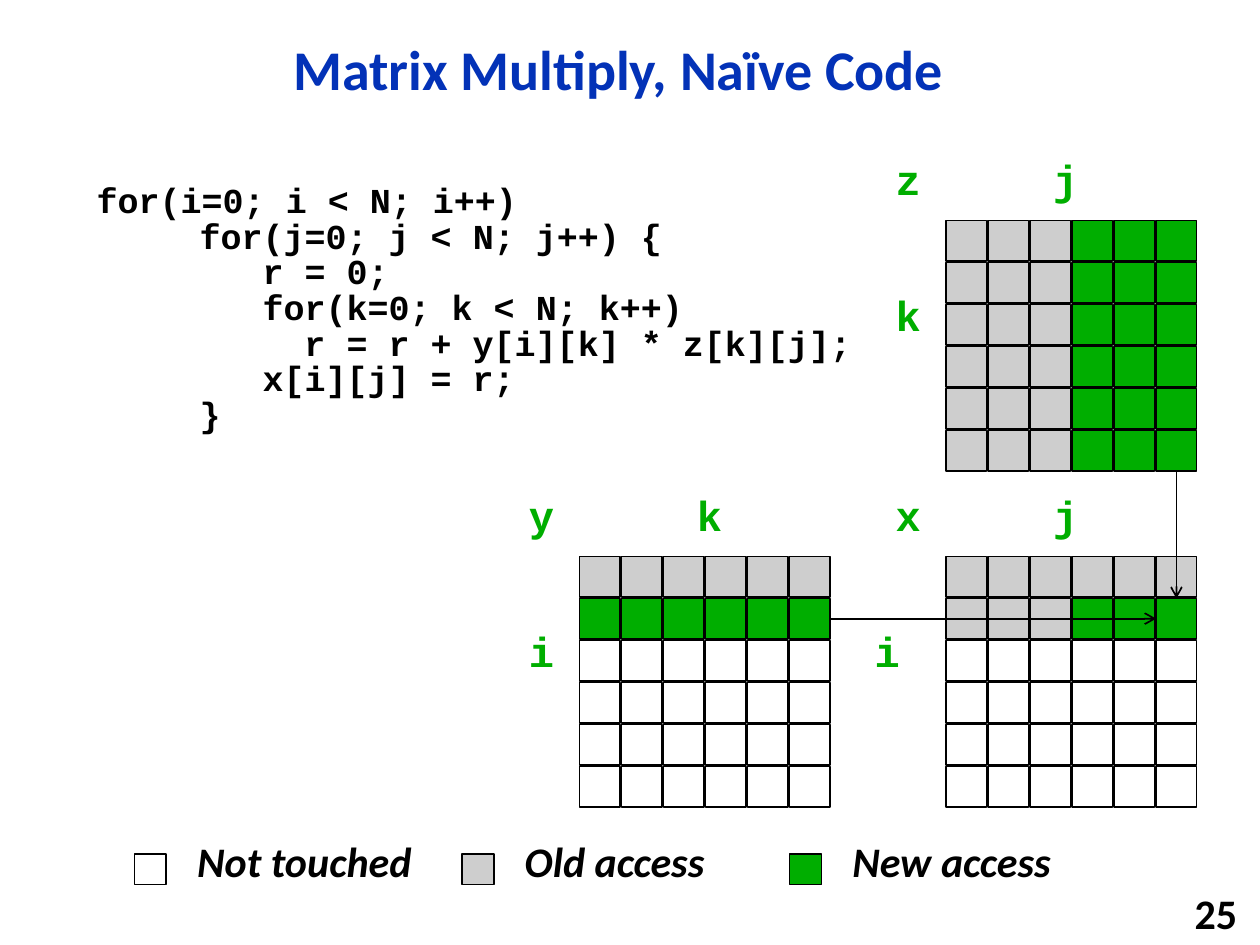
from lxml import etree
from pptx import Presentation
from pptx.dml.color import RGBColor
from pptx.enum.shapes import MSO_CONNECTOR, MSO_SHAPE
from pptx.enum.text import MSO_ANCHOR, MSO_AUTO_SIZE, PP_ALIGN
from pptx.oxml.ns import qn
from pptx.util import Inches, Pt

RECTANGLE = MSO_SHAPE.RECTANGLE
STRAIGHT = MSO_CONNECTOR.STRAIGHT
MIDDLE = MSO_ANCHOR.MIDDLE
NO_FIT = MSO_AUTO_SIZE.NONE
CENTER, RIGHT = PP_ALIGN.CENTER, PP_ALIGN.RIGHT
TOP_SIDE, LEFT_SIDE, BOTTOM_SIDE, RIGHT_SIDE = range(4)

THEME = {
    "title": ("Calibri", 32, "0332B7", False),
    "number": ("Calibri", 24, "000000", False),
    "code": ("Courier New", 20, "000000", False),
    "legend": ("Calibri", 24, "000000", True),
    "index": ("Courier New", 24, "00AE00", False),
    "untouched": "FFFFFF",
    "old": "CECECE",
    "new": "00AE00",
    "line": "000000",
}
STATES = {".": "untouched", "o": "old", "n": "new"}

deck = Presentation()
deck.slide_width = Inches(10)
deck.slide_height = Inches(7.5)
CELL = deck.slide_width / 30
CODE_COLUMN = deck.slide_width / 60


def cells(*counts):
    return [round(count * CELL) for count in counts]


def write(para, text, style):
    family, size, color, italic = THEME[style]
    span = para.add_run()
    span.text = text
    span.font.name = family
    span.font.size = Pt(size)
    span.font.bold = True
    span.font.italic = italic
    span.font.color.rgb = RGBColor.from_string(color)


page = deck.slides.add_slide(deck.slide_layouts[1])

title = page.shapes.title
title.left, title.top, title.width, title.height = cells(2.76, 0.51, 23.94, 2.43)
title.text_frame.auto_size = NO_FIT
title.text_frame.vertical_anchor = MIDDLE
para = title.text_frame.paragraphs[0]
para.alignment = CENTER
para.line_spacing = 0.9
write(para, "Matrix Multiply, Naïve Code", "title")

number = page.shapes.add_textbox(*cells(23.5, 21.25, 6.25, 0.95))
number.text_frame.word_wrap = True
number.text_frame.vertical_anchor = MIDDLE
para = number.text_frame.paragraphs[0]
para.alignment = RIGHT
write(para, "25", "number")

code = page.placeholders[1]
code.left, code.top, code.width, code.height = cells(0, 4.25, 21, 6.2)
code.text_frame.auto_size = NO_FIT
code_lines = [
    (4, "for(i=0; i < N; i++)"),
    (8.9, "for(j=0; j < N; j++) {"),
    (11.9, "r = 0;"),
    (11.9, "for(k=0; k < N; k++)"),
    (13.9, "r = r + y[i][k] * z[k][j];"),
    (11.9, "x[i][j] = r;"),
    (8.9, "}"),
]
for row, (column, text) in enumerate(code_lines):
    para = code.text_frame.paragraphs[0] if row == 0 else code.text_frame.add_paragraph()
    para.level = 1
    para.line_spacing = 0.85
    para.space_before = Pt(0 if row else 2.5)
    properties = para._p.get_or_add_pPr()
    properties.set("marL", str(round(column * CODE_COLUMN)))
    properties.set("indent", "0")
    etree.SubElement(properties, qn("a:buNone"))
    write(para, text, "code")

squares, labels = [], []

legend = [("untouched", "Not touched", 6.03), ("old", "Old access", 5.19), ("new", "New access", 5.64)]
for place, (state, text, width) in enumerate(legend):
    left = 3.2 + 7.8 * place
    squares.append((page.shapes, state, (left, 20.33, 0.76, 0.73), None))
    labels.append((page.shapes, text, "legend", (left + 1.2, 19.75, width, 1.5)))

matrices = [
    ("x", 22.53, 13.25, ["oooooo", "ooonnn"] + ["......"] * 4, ("j", 2.25), ("i", -2)),
    ("y", 13.8, 13.25, ["oooooo", "nnnnnn"] + ["......"] * 4, ("k", 2.5), ("i", -1.5)),
    ("z", 22.53, 5.25, ["ooonnn"] * 6, ("j", 2.25), ("k", -1.5)),
]
for name, left, top, rows, (across, across_offset), (down, down_offset) in matrices:
    group = page.shapes.add_group_shape().shapes
    for text, column, row in [(name, -1.5, -1.75), (across, across_offset, -1.75), (down, down_offset, 1.5)]:
        labels.append((group, text, "index", (left + column, top + row, 1.2, 1.5)))
    for row, marks in enumerate(rows):
        for column, mark in enumerate(marks):
            area = (left + column, top + row, 0.96, 0.96)
            squares.append((group, STATES[mark], area, (name, row, column)))

matrix_cells = {}
for shapes, state, area, key in squares:
    box = shapes.add_shape(RECTANGLE, *cells(*area))
    box.shadow.inherit = False
    box.fill.solid()
    box.fill.fore_color.rgb = RGBColor.from_string(THEME[state])
    box.line.color.rgb = RGBColor.from_string(THEME["line"])
    box.line.width = Pt(1)
    matrix_cells[key] = box

for shapes, text, style, area in labels:
    box = shapes.add_textbox(*cells(*area))
    box.text_frame.word_wrap = False
    write(box.text_frame.paragraphs[0], text, style)

target = matrix_cells["x", 1, 5]
arrows = [
    (matrix_cells["z", 5, 5], BOTTOM_SIDE, TOP_SIDE),
    (matrix_cells["y", 1, 5], RIGHT_SIDE, LEFT_SIDE),
]
for source, start_side, end_side in arrows:
    arrow = page.shapes.add_connector(STRAIGHT, 0, 0, 0, 0)
    arrow.begin_connect(source, start_side)
    arrow.end_connect(target, end_side)
    arrow.line.color.rgb = RGBColor.from_string(THEME["line"])
    arrow.line.width = Pt(1)
    etree.SubElement(arrow.line._get_or_add_ln(), qn("a:tailEnd"), type="arrow")
    etree.SubElement(arrow._element.spPr, qn("a:effectLst"))

deck.save("out.pptx")
